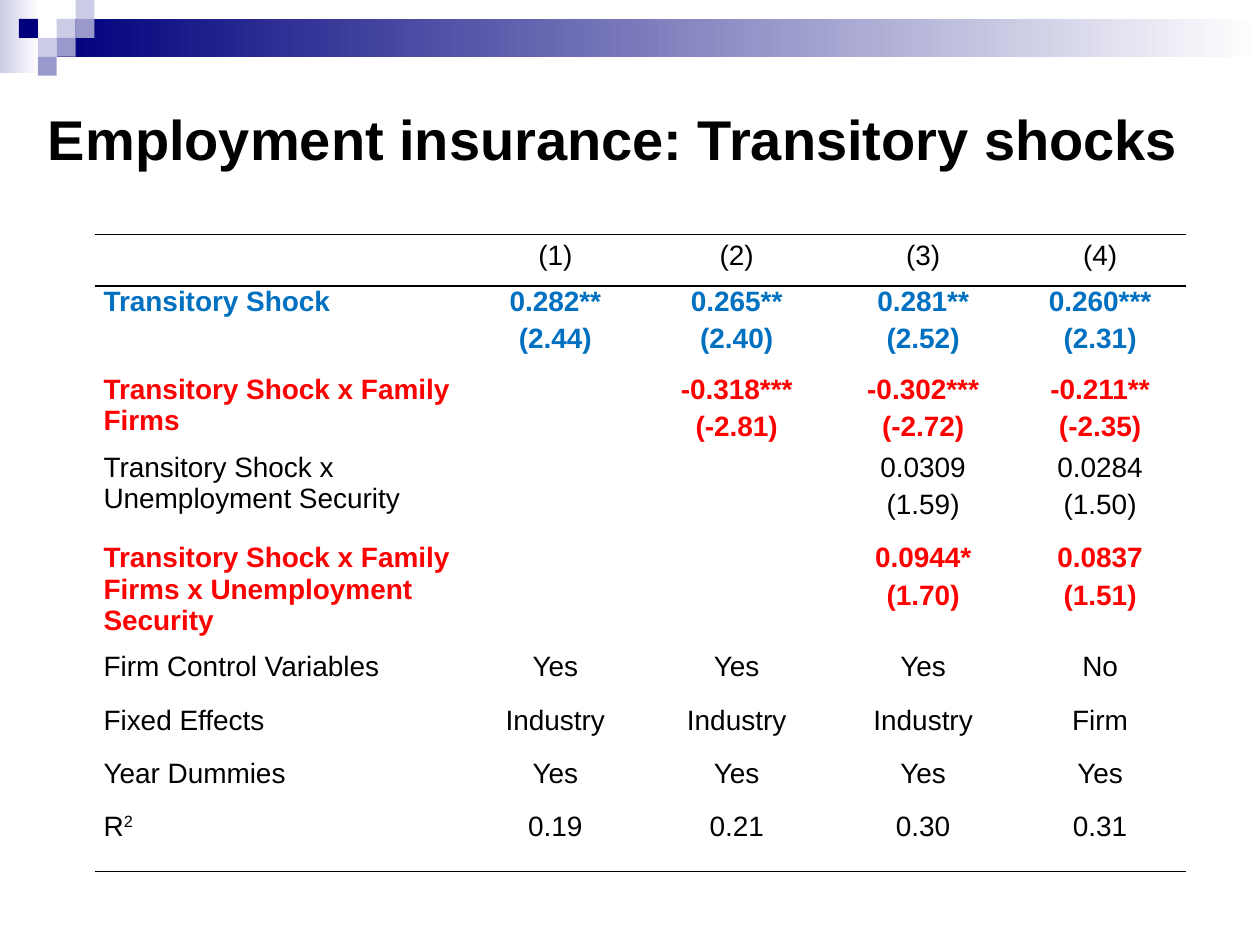
from lxml import etree
from pptx import Presentation
from pptx.dml.color import RGBColor
from pptx.enum.shapes import MSO_SHAPE
from pptx.enum.text import MSO_ANCHOR, MSO_AUTO_SIZE, PP_ALIGN
from pptx.oxml.ns import qn
from pptx.util import Pt

RECTANGLE = MSO_SHAPE.RECTANGLE
MIDDLE = MSO_ANCHOR.MIDDLE
NO_AUTOFIT = MSO_AUTO_SIZE.NONE
LEFT, CENTER = PP_ALIGN.LEFT, PP_ALIGN.CENTER

FONT = "Arial"
BLACK, BLUE, RED = "000000", "0070C0", "FF0000"
NAVY, LILAC, LAVENDER, WHITE = "00007D", "9999CC", "CCCCE6", "FFFFFF"
PLAIN_TABLE = "{2D5ABB26-0587-4C30-8999-92F81FD0307C}"

TILE = 10.8
TILES = [(3, 1, LAVENDER), (4, 0, LAVENDER), (4, 1, LILAC), (2, 2, LAVENDER),
         (1, 1, NAVY), (3, 2, LILAC), (2, 3, LILAC)]

COLUMN_WIDTHS = [214.4, 97.9, 109.4, 103.7, 98.6]
REGRESSION = [
    (29.5, BLACK, ["", "(1)", "(2)", "(3)", "(4)"]),
    (50.4, BLUE, ["Transitory Shock", "0.282**\n(2.44)", "0.265**\n(2.40)",
                  "0.281**\n(2.52)", "0.260***\n(2.31)"]),
    (44.6, RED, ["Transitory Shock x Family Firms", "", "-0.318***\n(-2.81)",
                 "-0.302***\n(-2.72)", "-0.211**\n(-2.35)"]),
    (51.8, BLACK, ["Transitory Shock x Unemployment Security", "", "",
                   "0.0309\n(1.59)", "0.0284\n(1.50)"]),
    (61.9, RED, ["Transitory Shock x Family Firms x Unemployment Security", "", "",
                 "0.0944*\n(1.70)", "0.0837\n(1.51)"]),
    (31, BLACK, ["Firm Control Variables", "Yes", "Yes", "Yes", "No"]),
    (30.2, BLACK, ["Fixed Effects", "Industry", "Industry", "Industry", "Firm"]),
    (30.2, BLACK, ["Year Dummies", "Yes", "Yes", "Yes", "Yes"]),
    (34.6, BLACK, ["R^2", "0.19", "0.21", "0.30", "0.31"]),
]


def rgb(value):
    """Turn a hex string into a colour."""
    return RGBColor.from_string(value)


def add_run(paragraph, text, size, color, bold):
    """Add one formatted run and return it."""
    run = paragraph.add_run()
    run.text = text
    run.font.name, run.font.size, run.font.bold = FONT, Pt(size), bold
    run.font.color.rgb = rgb(color)
    return run


def add_block(slide, left, top, width, height, *colors):
    """Add a rectangle filled with one colour or a left-to-right gradient."""
    block = slide.shapes.add_shape(RECTANGLE, Pt(left), Pt(top), Pt(width), Pt(height))
    block.shadow.inherit = False
    block.line.fill.background()
    if len(colors) == 1:
        block.fill.solid()
        block.fill.fore_color.rgb = rgb(colors[0])
        return
    block.fill.gradient()
    block.fill.gradient_angle = 0
    for stop, color in zip(block.fill.gradient_stops, colors):
        stop.color.rgb = rgb(color)


def add_banner(slide, left, top, width):
    """Draw the gradient band and its mosaic of tiles."""
    add_block(slide, left, top, 22.3, 41.8, LAVENDER, WHITE)
    add_block(slide, left + 3 * TILE, top + TILE, width - 3 * TILE, 2 * TILE, NAVY, WHITE)
    for column, row, color in TILES:
        add_block(slide, left + column * TILE, top + row * TILE, TILE, TILE, color)


def set_title(slide, left, top, width, height):
    """Place and fill the title placeholder."""
    title = slide.shapes.title
    title.left, title.top, title.width, title.height = map(Pt, (left, top, width, height))
    frame = title.text_frame
    frame.word_wrap, frame.auto_size, frame.vertical_anchor = True, NO_AUTOFIT, MIDDLE
    heading = frame.paragraphs[0]
    heading.alignment = LEFT
    add_run(heading, "Employment insurance: Transitory shocks", 32, BLACK, True)


def add_rule(cell, side):
    """Draw a thin black border on the top (T) or bottom (B) of a cell."""
    rule = etree.SubElement(cell._tc.get_or_add_tcPr(), qn(f"a:ln{side}"), w=str(Pt(1)))
    fill = etree.SubElement(rule, qn("a:solidFill"))
    etree.SubElement(fill, qn("a:srgbClr"), val=BLACK)


def fill_cell(cell, text, color, is_header, is_label):
    """Write the lines of a cell, with any exponent after a caret raised."""
    side, edge = (7.2, 3.6) if is_header else (5.2, 0)
    cell.margin_left = cell.margin_right = Pt(side)
    cell.margin_top = cell.margin_bottom = Pt(edge)
    cell.fill.background()
    for index, line in enumerate(text.split("\n") if text else []):
        frame = cell.text_frame
        paragraph = frame.add_paragraph() if index else frame.paragraphs[0]
        paragraph.alignment = LEFT if is_label else CENTER
        paragraph.space_before = Pt(3.9 if is_label else 3.4)
        base, _, exponent = line.partition("^")
        add_run(paragraph, base, 16, color, color != BLACK)
        if exponent:
            raised = add_run(paragraph, exponent, 16, color, False)
            raised.font._element.set("baseline", "30000")


def add_regression_table(slide, left, top, width, height):
    """Build the table of coefficients, ruled above and below."""
    table = slide.shapes.add_table(len(REGRESSION), len(COLUMN_WIDTHS), Pt(left), Pt(top),
                                   Pt(width), Pt(height)).table
    table.first_row = table.horz_banding = False
    table._tbl.tblPr.find(qn("a:tableStyleId")).text = PLAIN_TABLE
    for column, column_width in zip(table.columns, COLUMN_WIDTHS):
        column.width = Pt(column_width)
    last = len(REGRESSION) - 1
    for r, (row_height, color, texts) in enumerate(REGRESSION):
        table.rows[r].height = Pt(row_height)
        for c, text in enumerate(texts):
            cell = table.cell(r, c)
            if r == 0:
                add_rule(cell, "T")
            if r in (0, last):
                add_rule(cell, "B")
            fill_cell(cell, text, color, r == 0, c == 0)


def main():
    """Build and save the slide."""
    deck = Presentation()
    deck.slide_width, deck.slide_height = Pt(720), Pt(540)
    slide = deck.slides.add_slide(deck.slide_layouts[5])
    add_banner(slide, 0, 0, 720)
    set_title(slide, 20.2, 36, 691.9, 86.4)
    add_regression_table(slide, 54, 133.9, sum(COLUMN_WIDTHS), 362.9)
    deck.save("out.pptx")


if __name__ == "__main__":
    main()
